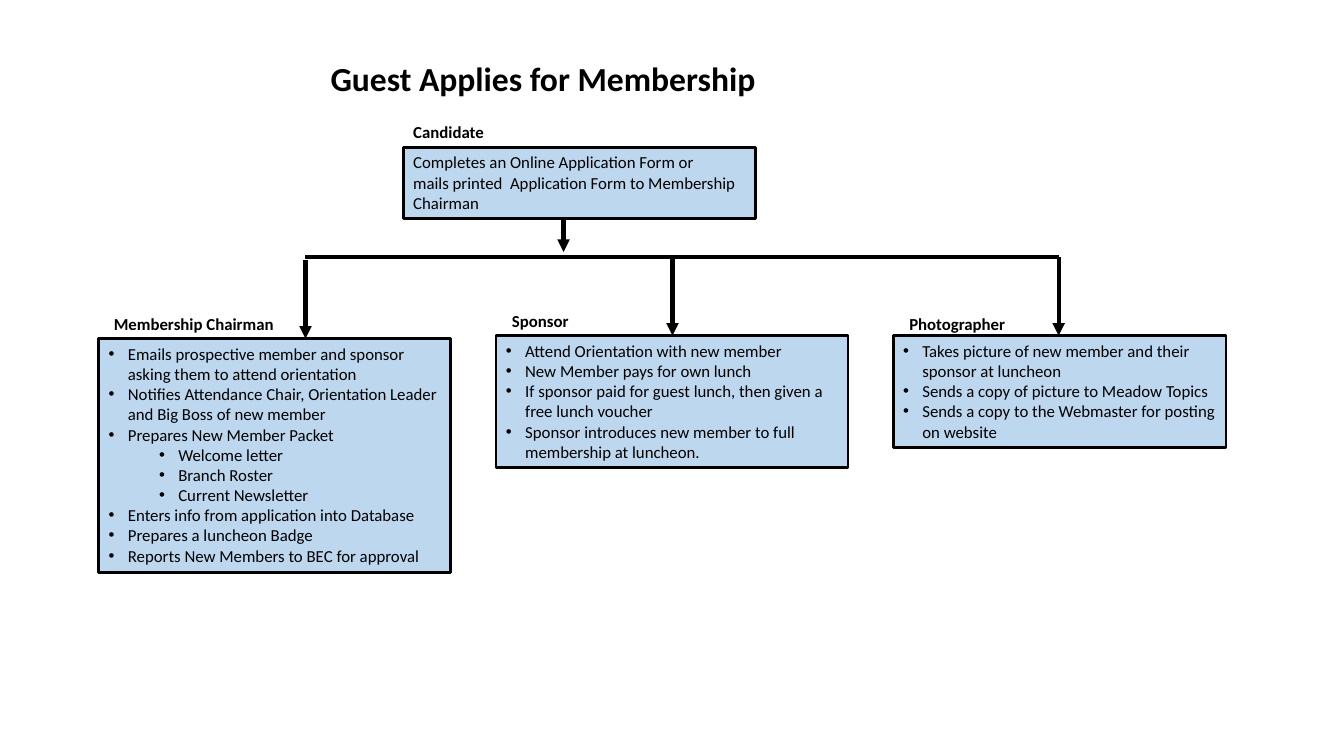
import pptx
import pptx.util
import pptx.dml.color
import pptx.enum.shapes
import pptx.enum.text
import pptx.oxml.ns
from dataclasses import dataclass
from lxml import etree

Inches = pptx.util.Inches
Pt = pptx.util.Pt
RGB = pptx.dml.color.RGBColor
qn = pptx.oxml.ns.qn


@dataclass(frozen=True)
class Theme:
    font: str = "Calibri"
    ink: RGB = RGB(0, 0, 0)
    fill: RGB = RGB(0xBD, 0xD7, 0xEE)
    title: int = 24
    body: int = 12
    edge: int = 2
    arrow: int = 3
    indent: float = 0.19
    step: float = 0.5


THEME = Theme()

# Each role: name, label place, box, duties as (level, text)
ROLES = [
    ("Membership Chairman", (1.03, 3.06, 1.81, 0.3), (0.98, 3.36, 3.49, 2.32), [
        (0, "Emails prospective member and sponsor asking them to attend orientation"),
        (0, "Notifies Attendance Chair, Orientation Leader and Big Boss of new member"),
        (0, "Prepares New Member Packet"),
        (1, "Welcome letter"),
        (1, "Branch Roster"),
        (1, "Current Newsletter"),
        (0, "Enters info from application into Database"),
        (0, "Prepares a luncheon Badge"),
        (0, "Reports New Members to BEC for approval"),
    ]),
    ("Sponsor", (4.98, 3.03, 0.77, 0.3), (4.92, 3.33, 3.49, 1.31), [
        (0, "Attend Orientation with new member"),
        (0, "New Member pays for own lunch"),
        (0, "If sponsor paid for guest lunch, then given a free lunch voucher"),
        (0, "Sponsor introduces new member to full membership at luncheon."),
    ]),
    ("Photographer", (8.92, 3.06, 1.17, 0.3), (8.86, 3.33, 3.3, 1.11), [
        (0, "Takes picture of new member and their sponsor at luncheon"),
        (0, "Sends a copy of picture to Meadow Topics"),
        (0, "Sends a copy to the Webmaster for posting on website"),
    ]),
]


def style(par, size, bold=False):
    par.alignment = pptx.enum.text.PP_ALIGN.LEFT
    for run in par.runs:
        run.font.name = THEME.font
        run.font.size = Pt(size)
        run.font.bold = bold
        run.font.color.rgb = THEME.ink


def bullet(par, level):
    par.level = level
    props = par._p.get_or_add_pPr()
    props.set("marL", str(Inches(THEME.indent + level * THEME.step)))
    props.set("indent", str(-Inches(THEME.indent)))
    etree.SubElement(props, qn("a:buFont"), typeface="Arial")
    etree.SubElement(props, qn("a:buChar"), char="•")


def add_label(slide, box, text, size, wrap=False):
    frame = slide.shapes.add_textbox(*map(Inches, box)).text_frame
    frame.text = text
    frame.word_wrap = wrap
    frame.auto_size = pptx.enum.text.MSO_AUTO_SIZE.SHAPE_TO_FIT_TEXT
    style(frame.paragraphs[0], size, bold=True)


def add_panel(slide, box, lines):
    kind = pptx.enum.shapes.MSO_SHAPE.RECTANGLE
    panel = slide.shapes.add_shape(kind, *map(Inches, box))
    panel.shadow.inherit = False
    panel.fill.solid()
    panel.fill.fore_color.rgb = THEME.fill
    panel.line.color.rgb = THEME.ink
    panel.line.width = Pt(THEME.edge)
    frame = panel.text_frame
    frame.word_wrap = True
    frame.auto_size = pptx.enum.text.MSO_AUTO_SIZE.SHAPE_TO_FIT_TEXT
    frame.vertical_anchor = pptx.enum.text.MSO_ANCHOR.TOP
    frame.text = "\n".join(text for _, text in lines)
    for par, (level, _) in zip(frame.paragraphs, lines):
        style(par, THEME.body)
        if level is not None:
            bullet(par, level)


def add_line(slide, start, end, head=True):
    kind = pptx.enum.shapes.MSO_CONNECTOR.STRAIGHT
    line = slide.shapes.add_connector(kind, *map(Inches, start + end))
    line.line.color.rgb = THEME.ink
    line.line.width = Pt(THEME.arrow)
    if head:
        etree.SubElement(line.line._get_or_add_ln(), qn("a:tailEnd"), type="triangle")
    etree.SubElement(line._element.spPr, qn("a:effectLst"))


def add_start(slide, box):
    """Candidate box with its label above."""
    left, top, _, _ = box
    add_label(slide, (left, top - 0.3, 0.91, 0.3), "Candidate", THEME.body)
    add_panel(slide, box, [
        (None, "Completes an Online Application Form or"),
        (None, "mails printed  Application Form to Membership Chairman"),
    ])


def add_role(slide, name, spot, box, duties):
    add_label(slide, spot, name, THEME.body)
    add_panel(slide, box, duties)


def add_tree(slide, box):
    """Stem, crossbar and three drops within the given box."""
    left, top, width, height = box
    right, low, bar = left + width, top + height, top + 0.38
    add_line(slide, (5.59, top), (5.59, bar - 0.05))
    add_line(slide, (left, bar), (right, bar), head=False)
    add_line(slide, (left, bar + 0.03), (left, low + 0.03))
    for x in (6.67, right):
        add_line(slide, (x, bar), (x, low))


def main():
    deck = pptx.Presentation()
    deck.slide_width = Inches(13.33)
    deck.slide_height = Inches(7.5)
    slide = deck.slides.add_slide(deck.slide_layouts[6])

    # Title
    add_label(slide, (3.18, 0.53, 4.53, 0.5), "Guest Applies for Membership",
              THEME.title, wrap=True)
    # Candidate and the three roles
    add_start(slide, (4, 1.46, 3.49, 0.71))
    for role in ROLES:
        add_role(slide, *role)
    # Arrows
    add_tree(slide, (3.03, 2.17, 7.47, 1.16))

    deck.save("out.pptx")


if __name__ == "__main__":
    main()
